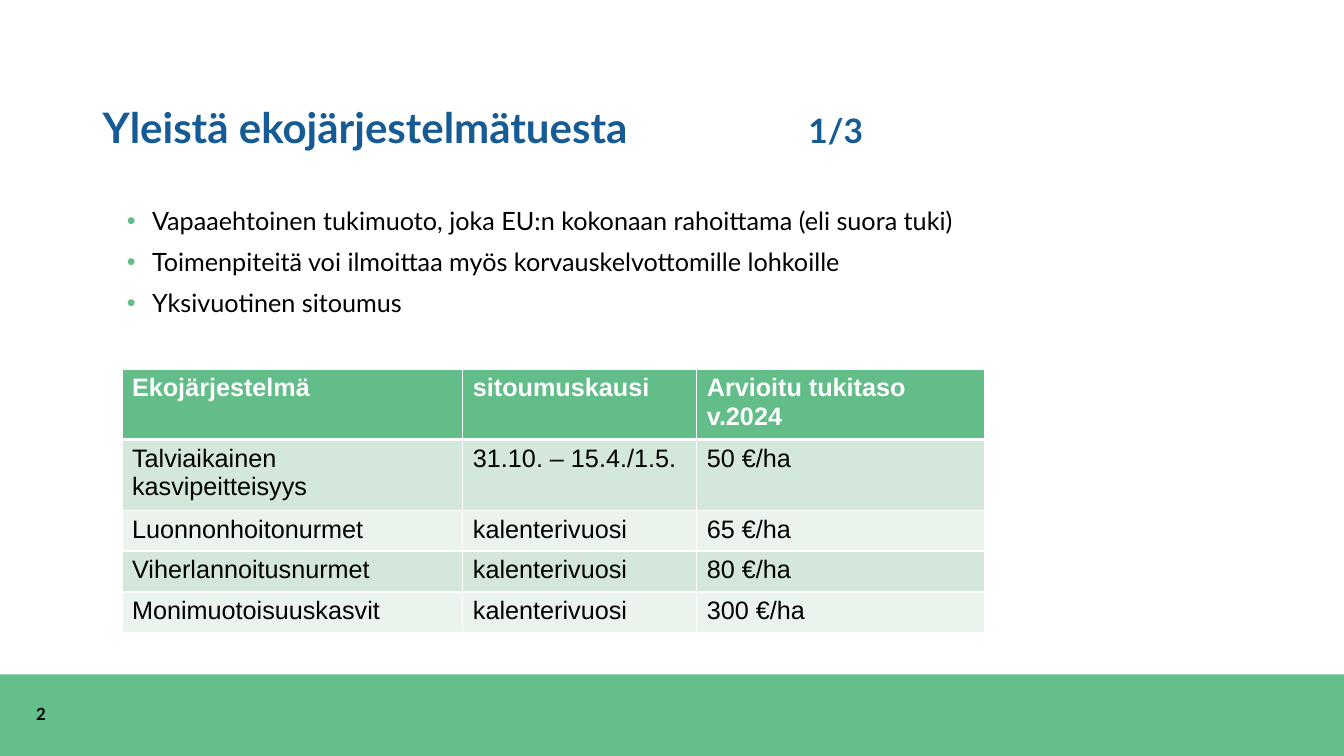
from lxml.etree import SubElement
from pptx import Presentation
from pptx.dml.color import RGBColor
from pptx.enum.shapes import MSO_SHAPE
from pptx.enum.text import MSO_ANCHOR
from pptx.oxml.ns import qn
from pptx.util import Inches, Pt

WHITE = RGBColor(0xFF, 0xFF, 0xFF)
BLACK = RGBColor(0, 0, 0)
BLUE = RGBColor(0x16, 0x5B, 0x94)
BAND = RGBColor(0x64, 0xBF, 0x8A)
GREEN = RGBColor(0x63, 0xBD, 0x88)
TINTS = RGBColor(0xEA, 0xF4, 0xED), RGBColor(0xD3, 0xE8, 0xDA)

POINTS = [
    "Vapaaehtoinen tukimuoto, joka EU:n kokonaan rahoittama (eli suora tuki)",
    "Toimenpiteitä voi ilmoittaa myös korvauskelvottomille lohkoille",
    "Yksivuotinen sitoumus",
]
ROWS = [
    ("Ekojärjestelmä", "sitoumuskausi", "Arvioitu tukitaso v.2024"),
    ("Talviaikainen kasvipeitteisyys", "31.10. – 15.4./1.5.", "50 €/ha"),
    ("Luonnonhoitonurmet", "kalenterivuosi", "65 €/ha"),
    ("Viherlannoitusnurmet", "kalenterivuosi", "80 €/ha"),
    ("Monimuotoisuuskasvit", "kalenterivuosi", "300 €/ha"),
]
SHARES = 0.395, 0.271, 0.334


def style(para, name, color, size=None, bold=False):
    font = para.font
    font.name, font.bold = name, bold
    font.color.rgb = color
    if size:
        font.size = Pt(size)


def add_text(slide, box):
    frame = slide.shapes.add_textbox(*map(Inches, box)).text_frame
    frame.word_wrap = True
    return frame


def add_footer(slide, box, number):
    left, top, width, height = box
    bar = slide.shapes.add_shape(MSO_SHAPE.RECTANGLE, *map(Inches, box))
    bar.shadow.inherit = False
    bar.fill.solid()
    bar.fill.fore_color.rgb = BAND
    bar.line.fill.background()
    frame = add_text(slide, (left + 0.26, top + 0.3 * height, 0.87, 0.3))
    para = frame.paragraphs[0]
    para.text = number
    style(para, "Lato", BLACK, 12, True)


def add_title(slide, box, title, part):
    frame = add_text(slide, box)
    frame.vertical_anchor = MSO_ANCHOR.MIDDLE
    para = frame.paragraphs[0]
    para.line_spacing = 0.9
    tabs = SubElement(para._p.get_or_add_pPr(), qn("a:tabLst"))
    SubElement(tabs, qn("a:tab"), pos=str(Inches(7)), algn="l")
    style(para, "Lato", BLUE, bold=True)
    for text, size in ((title + "\t", 30), (part, 24)):
        run = para.add_run()
        run.text = text
        run.font.size = Pt(size)


def add_points(slide, box, points):
    frame = add_text(slide, box)
    for i, point in enumerate(points):
        para = frame.add_paragraph() if i else frame.paragraphs[0]
        para.text = point
        para.line_spacing = 0.9
        if i:
            para.space_before = Pt(10)
        props = para._p.get_or_add_pPr()
        props.set("marL", str(Inches(0.25)))
        props.set("indent", str(-Inches(0.25)))
        tint = SubElement(props, qn("a:buClr"))
        SubElement(tint, qn("a:srgbClr"), val=str(GREEN))
        SubElement(props, qn("a:buFont"), typeface="Arial")
        SubElement(props, qn("a:buChar"), char="•")
        style(para, "Lato", BLACK, 18)


def add_edges(cell, head):
    props = cell._tc.get_or_add_tcPr()
    for i, side in enumerate(("lnL", "lnR", "lnT", "lnB")):
        width = 3 if head and side == "lnB" else 1
        edge = props.makeelement(qn("a:" + side), {"w": str(Pt(width))})
        fill = SubElement(edge, qn("a:solidFill"))
        SubElement(fill, qn("a:srgbClr"), val=str(WHITE))
        props.insert(i, edge)


def add_grid(slide, box, rows):
    size = len(rows), len(rows[0])
    table = slide.shapes.add_table(*size, *map(Inches, box)).table
    for column, share in zip(table.columns, SHARES):
        column.width = Inches(box[2] * share)
    for r, row in enumerate(rows):
        head = r == 0
        for c, text in enumerate(row):
            cell = table.cell(r, c)
            cell.fill.solid()
            cell.fill.fore_color.rgb = GREEN if head else TINTS[r % 2]
            add_edges(cell, head)
            para = cell.text_frame.paragraphs[0]
            para.text = text
            style(para, "Arial", WHITE if head else BLACK, 18, head)


def main():
    deck = Presentation()
    deck.slide_width, deck.slide_height = Inches(13.33), Inches(7.5)
    slide = deck.slides.add_slide(deck.slide_layouts[6])
    add_footer(slide, (0, 6.69, 13.33, 0.81), "2")
    add_title(slide, (0.92, 0.86, 10.4, 0.86), "Yleistä ekojärjestelmätuesta", "1/3")
    add_points(slide, (1.16, 2.02, 10.6, 2.03), POINTS)
    add_grid(slide, (1.21, 3.66, 8.56, 2.03), ROWS)
    deck.save("out.pptx")


if __name__ == "__main__":
    main()
